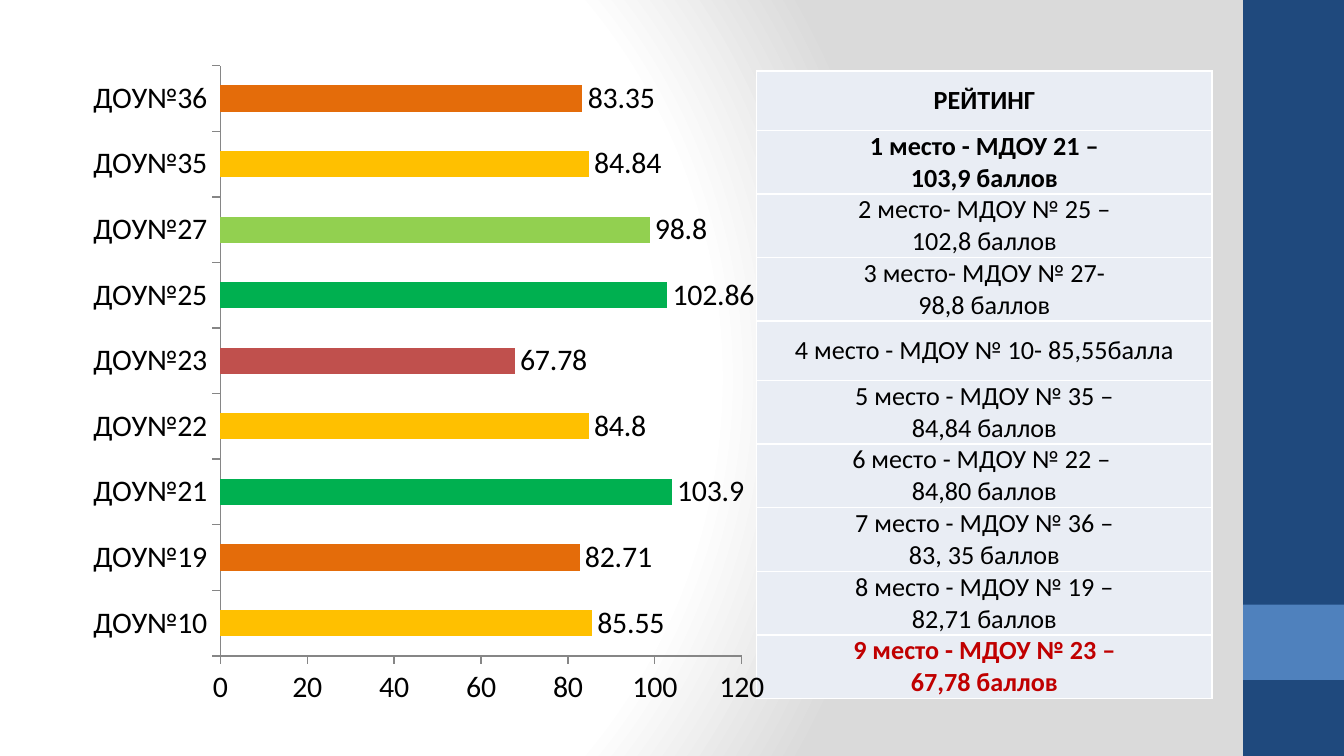
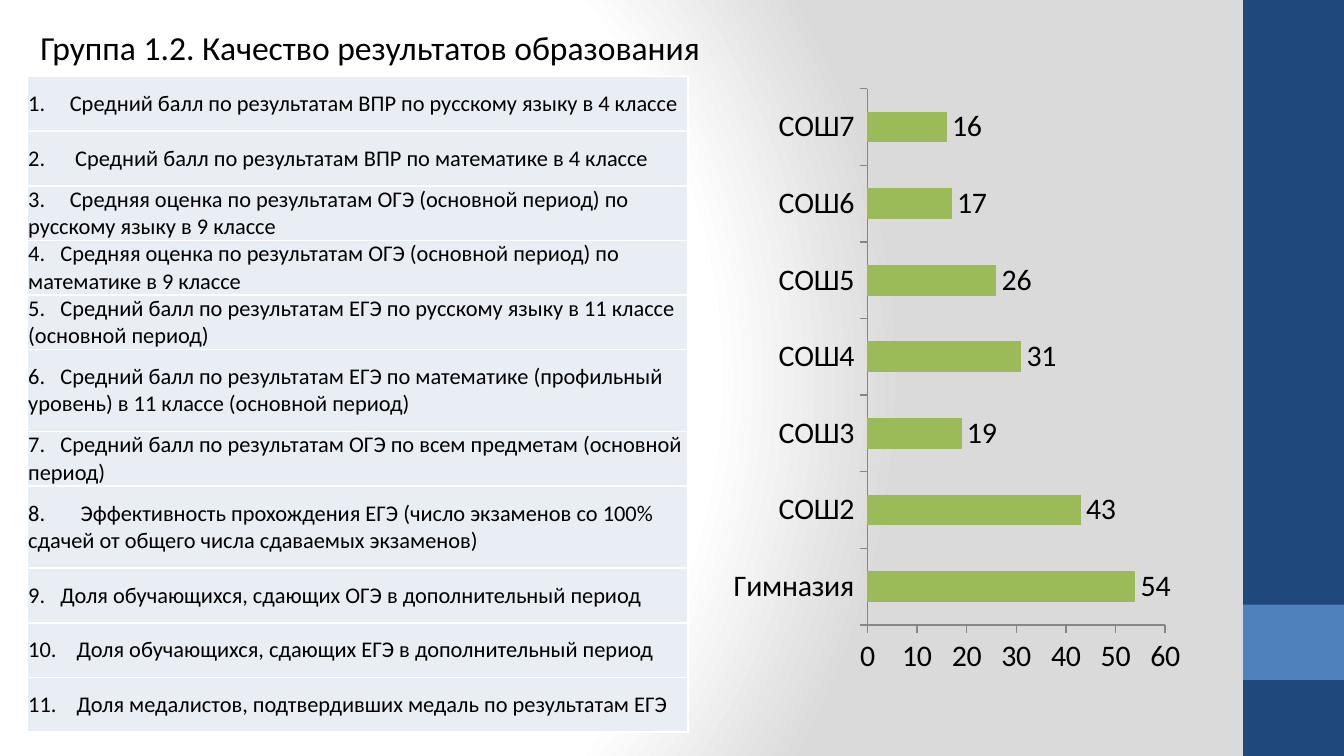
from copy import deepcopy

from pptx import Presentation
from pptx.chart.data import CategoryChartData
from pptx.dml.color import RGBColor
from pptx.enum import chart as ch, shapes, text
from pptx.oxml import parse_xml
from pptx.oxml.ns import nsdecls, qn
from pptx.util import Inches, Pt


class Theme:
    font = "Calibri"
    ink, white, grey = "000000", "FFFFFF", "DADADA"
    navy, blue, cell, axis = "1F497D", "4F81BD", "E9EDF4", "868686"
    green, lime, amber, orange = "00B050", "92D050", "FFC000", "E46C0A"
    red, dark_red, olive = "C0504D", "C00000", "9BBB59"
    title_size, chart_size, rating_size, criteria_size = 18, 16, 14, 12


SLIDE_W = 10
SLIDE_H = SLIDE_W * 9 / 16
BANDS = [  # left, top, width, height, colour
    (9.25, 0, 0.75, SLIDE_H, Theme.navy),
    (9.25, 4.5, 0.75, 0.56, Theme.blue),
]

KINDERGARTENS = [
    ("ДОУ№10", 85.55, Theme.amber),
    ("ДОУ№19", 82.71, Theme.orange),
    ("ДОУ№21", 103.9, Theme.green),
    ("ДОУ№22", 84.8, Theme.amber),
    ("ДОУ№23", 67.78, Theme.red),
    ("ДОУ№25", 102.86, Theme.green),
    ("ДОУ№27", 98.8, Theme.lime),
    ("ДОУ№35", 84.84, Theme.amber),
    ("ДОУ№36", 83.35, Theme.orange),
]
RATING = [  # wording, format
    ("РЕЙТИНГ", {"bold": True}),
    ("1 место - МДОУ 21 –\n103,9 баллов", {"bold": True}),
    ("2 место- МДОУ № 25 –\n102,8 баллов", {}),
    ("3 место- МДОУ № 27-\n98,8 баллов", {}),
    ("4 место - МДОУ № 10- 85,55балла", {}),
    ("5 место - МДОУ № 35 –\n84,84 баллов", {}),
    ("6 место - МДОУ № 22 – \n84,80 баллов", {}),
    ("7 место - МДОУ № 36 –\n83, 35 баллов", {}),
    ("8 место - МДОУ № 19 –\n82,71 баллов", {}),
    ("9 место - МДОУ № 23 –\n67,78 баллов", {"bold": True, "color": Theme.dark_red}),
]

CRITERIA_TITLE = "Группа 1.2. Качество результатов образования"
CRITERIA_HEIGHT = 4.88
CRITERIA = [  # wording, distance from the cell edge to the words, share of the height
    ("Средний балл по результатам ВПР по русскому языку в 4 классе", 0.31, 2),
    ("Средний балл по результатам ВПР по математике в 4 классе", 0.35, 2),
    ("Средняя оценка по результатам ОГЭ (основной период) по русскому языку в 9 классе", 0.31, 2),
    ("Средняя оценка по результатам ОГЭ (основной период) по математике в 9 классе", 0.24, 2),
    ("Средний балл по результатам ЕГЭ по русскому языку в 11 классе (основной период)", 0.24, 2),
    ("Средний балл по результатам ЕГЭ по математике (профильный уровень) "
     "в 11 классе (основной период)", 0.24, 3),
    ("Средний балл по результатам ОГЭ по всем предметам (основной период)", 0.24, 2),
    ("Эффективность прохождения ЕГЭ (число экзаменов со 100% сдачей "
     "от общего числа сдаваемых экзаменов)", 0.39, 3),
    ("Доля обучающихся, сдающих ОГЭ в дополнительный период", 0.24, 2),
    ("Доля обучающихся, сдающих ЕГЭ в дополнительный период", 0.36, 2),
    ("Доля медалистов, подтвердивших медаль по результатам ЕГЭ", 0.36, 2),
]
SCHOOLS = [
    (name, score, Theme.olive)
    for name, score in [("Гимназия", 54), ("СОШ2", 43), ("СОШ3", 19), ("СОШ4", 31),
                        ("СОШ5", 26), ("СОШ6", 17), ("СОШ7", 16)]
]


def rgb(color):
    return RGBColor.from_string(color)


def style_font(font, size, color=Theme.ink, bold=False):
    font.name, font.size, font.bold = Theme.font, Pt(size), bold
    font.color.rgb = rgb(color)


def write(frame, words, size, align=text.PP_ALIGN.LEFT, tab=None, **font_format):
    """Fill a text frame with one paragraph; tab is a tab stop in inches."""
    paragraph = frame.paragraphs[0]
    paragraph.text = words
    paragraph.alignment = align
    for run in paragraph.runs:
        style_font(run.font, size, **font_format)
    for line_break in paragraph._p.findall(qn("a:br")):
        line_break.append(deepcopy(paragraph.runs[0]._r.rPr))
    if tab is not None:
        paragraph._p.get_or_add_pPr().append(parse_xml(
            f'<a:tabLst {nsdecls("a")}><a:tab pos="{Inches(tab)}" algn="l"/></a:tabLst>'))


def dress_master(master, slide):
    """Give the master its background and side bands, built by way of a slide."""
    master.background.fill.solid()
    background = master.element.cSld.bg.bgPr
    stops = "".join(
        f'<a:gs pos="{percent * 1000}"><a:srgbClr val="{color}"/></a:gs>'
        for percent, color in [(0, Theme.white), (75, Theme.white), (100, Theme.grey)])
    background.replace(background[0], parse_xml(
        f'<a:gradFill {nsdecls("a")} rotWithShape="1"><a:gsLst>{stops}</a:gsLst>'
        '<a:path path="circle"><a:fillToRect l="20000" t="50000" r="100000" b="50000"/>'
        '</a:path></a:gradFill>'))
    for position, (*box, color) in enumerate(BANDS, start=2):
        band = slide.shapes.add_shape(shapes.MSO_SHAPE.RECTANGLE, *map(Inches, box))
        band.shadow.inherit = False
        band.fill.solid()
        band.fill.fore_color.rgb = rgb(color)
        band.line.fill.background()
        master.shapes.element.insert(position, band.element)


def style_cell(cell):
    borders = cell._tc.get_or_add_tcPr()
    for side in "LRTB":
        borders.append(parse_xml(
            f'<a:ln{side} {nsdecls("a")} w="{Pt(1)}"><a:solidFill>'
            f'<a:srgbClr val="{Theme.white}"/></a:solidFill></a:ln{side}>'))
    cell.fill.solid()
    cell.fill.fore_color.rgb = rgb(Theme.cell)
    cell.vertical_anchor = text.MSO_ANCHOR.MIDDLE
    cell.margin_left = cell.margin_right = Inches(0.01)
    cell.margin_top = cell.margin_bottom = 0


def add_list_table(slide, left, top, width, rows):
    """Draw a one-column table; each row is (words, height, format)."""
    height = sum(row_height for _, row_height, _ in rows)
    table = slide.shapes.add_table(
        len(rows), 1, *map(Inches, (left, top, width, height))).table
    table.first_row = table.horz_banding = False
    for index, (words, row_height, cell_format) in enumerate(rows):
        table.rows[index].height = Inches(row_height)
        cell = table.cell(index, 0)
        style_cell(cell)
        write(cell.text_frame, words, **cell_format)


def add_score_chart(slide, box, scores, maximum, step):
    names, values, colors = zip(*scores)
    data = CategoryChartData()
    data.categories = names
    data.add_series("Series 1", values)
    chart = slide.shapes.add_chart(
        ch.XL_CHART_TYPE.BAR_CLUSTERED, *map(Inches, box), data).chart
    chart.has_legend = chart.has_title = False
    style_font(chart.font, Theme.chart_size)

    for axis in (chart.category_axis, chart.value_axis):
        axis.has_major_gridlines = False
        axis.major_tick_mark = ch.XL_TICK_MARK.OUTSIDE
        axis.format.line.color.rgb = rgb(Theme.axis)
        axis.format.line.width = Pt(0.75)
    chart.value_axis.minimum_scale = 0
    chart.value_axis.maximum_scale = maximum
    chart.value_axis.major_unit = step

    plot = chart.plots[0]
    plot.gap_width = 150
    plot.vary_by_categories = False
    plot.has_data_labels = True
    plot.data_labels.show_value = True
    plot.data_labels.position = ch.XL_LABEL_POSITION.OUTSIDE_END
    bars = plot.series[0]
    bars.format.fill.solid()
    bars.format.fill.fore_color.rgb = rgb(colors[0])
    for index, color in enumerate(colors):
        if color != colors[0]:
            fill = bars.points[index].format.fill
            fill.solid()
            fill.fore_color.rgb = rgb(color)


def build_rating(slide):
    rows = [(words, 0.44, {"size": Theme.rating_size, "align": text.PP_ALIGN.CENTER, **font_format})
            for words, font_format in RATING]
    add_list_table(slide, 5.63, 0.53, 3.39, rows)
    add_score_chart(slide, (0.59, 0.39, 5.2, 4.96), KINDERGARTENS, maximum=120, step=20)


def build_criteria(slide):
    title = slide.shapes.title
    title.left, title.top, title.width, title.height = map(Inches, (0.2, 0.15, 7.87, 0.4))
    title.text_frame.vertical_anchor = text.MSO_ANCHOR.TOP
    title.text_frame.auto_size = text.MSO_AUTO_SIZE.SHAPE_TO_FIT_TEXT
    write(title.text_frame, CRITERIA_TITLE, Theme.title_size)

    unit = CRITERIA_HEIGHT / sum(share for *_, share in CRITERIA)
    rows = [(f"{number}.\t{words}", share * unit, {"size": Theme.criteria_size, "tab": tab})
            for number, (words, tab, share) in enumerate(CRITERIA, start=1)]
    add_list_table(slide, 0.2, 0.57, 4.92, rows)
    add_score_chart(slide, (5.39, 0.57, 3.46, 4.54), SCHOOLS, maximum=60, step=10)


def main():
    deck = Presentation()
    deck.slide_width, deck.slide_height = Inches(SLIDE_W), Inches(SLIDE_H)
    title_only, blank = deck.slide_layouts[5], deck.slide_layouts[6]
    rating = deck.slides.add_slide(blank)
    dress_master(deck.slide_master, rating)
    build_rating(rating)
    build_criteria(deck.slides.add_slide(title_only))
    deck.save("out.pptx")


if __name__ == "__main__":
    main()
